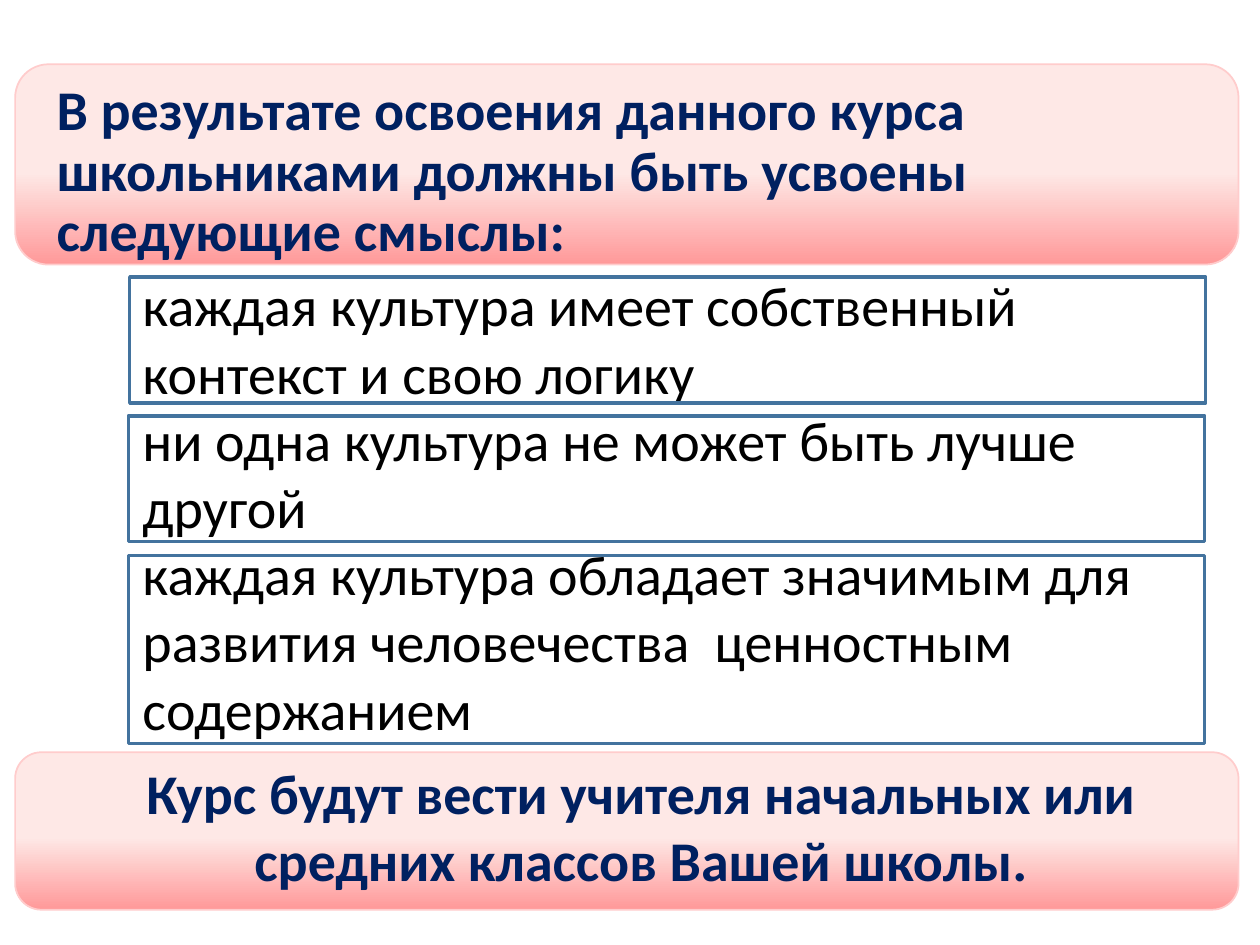
from copy import deepcopy
from typing import NamedTuple

from lxml.etree import SubElement
from pptx import Presentation
from pptx.dml.color import RGBColor
from pptx.enum.shapes import MSO_SHAPE
from pptx.enum.text import MSO_ANCHOR, MSO_AUTO_SIZE, PP_ALIGN
from pptx.oxml.ns import qn
from pptx.util import Inches, Pt

COLORS = {
    "navy": "002060",
    "black": "000000",
    "pale": "FEE8E6",
    "pink": "FF9999",
    "panel_line": "FFCCCC",
    "frame_line": "43739E",
}


class Area(NamedTuple):
    left: float
    top: float
    width: float
    height: float


PANELS = [Area(0.12, 0.51, 9.71, 1.59), Area(0.12, 5.97, 9.71, 1.25)]
FRAMES = [Area(1.03, 2.2, 8.54, 1), Area(1.02, 3.3, 8.54, 1), Area(1.02, 4.41, 8.54, 1.49)]
TITLE = "В результате освоения данного курса школьниками должны быть усвоены следующие смыслы:"
MEANINGS = [
    "каждая культура имеет собственный контекст и свою логику",
    "ни одна культура не может быть лучше другой",
    "каждая культура обладает значимым для развития человечества  ценностным содержанием",
]
CLOSING = "Курс будут вести учителя начальных или средних классов Вашей школы."


def color(name: str) -> RGBColor:
    return RGBColor.from_string(COLORS[name])


def place(shape, area: Area) -> None:
    shape.left, shape.top, shape.width, shape.height = map(Inches, area)


def add_outlined(page, kind: MSO_SHAPE, area: Area, line: str, width: float):
    shape = page.shapes.add_shape(kind, *map(Inches, area))
    shape.shadow.inherit = False
    shape.line.color.rgb = color(line)
    shape.line.width = Pt(width)
    return shape


def add_panel(page, area: Area) -> None:
    panel = add_outlined(page, MSO_SHAPE.ROUNDED_RECTANGLE, area, "panel_line", 1)
    panel.fill.gradient()
    panel.fill.gradient_angle = 270
    first = panel.fill.gradient_stops[0]
    first.color.rgb = color("pale")
    first.position = 0
    stop_list = panel.fill._fill._gradFill.gsLst
    stop_list.insert(1, deepcopy(stop_list[0]))
    middle, last = list(panel.fill.gradient_stops)[1:]
    middle.position = 0.54
    last.position = 1
    last.color.rgb = color("pink")


def write(box, texts: list[str], ink: str, bold: bool, align: PP_ALIGN, anchor: MSO_ANCHOR) -> None:
    frame = box.text_frame
    frame.word_wrap = True
    frame.auto_size = MSO_AUTO_SIZE.NONE
    frame.vertical_anchor = anchor
    frame.text = "\n".join(texts)
    for para in frame.paragraphs:
        properties = para._p.get_or_add_pPr()
        properties.set("marL", "0")
        properties.set("indent", "0")
        SubElement(properties, qn("a:buNone"))
        para.alignment = align
        para.space_before = Pt(0)
        para.font.name = "Calibri"
        para.font.size = Pt(32)
        para.font.bold = bold
        para.font.color.rgb = color(ink)


def main() -> None:
    deck = Presentation()
    deck.slide_width, deck.slide_height = Inches(10), Inches(7.5)
    page = deck.slides.add_slide(deck.slide_layouts[1])
    title, body = page.placeholders

    # Gradient panels lie behind the text
    for area in PANELS:
        add_panel(page, area)
    for placeholder in (title, body):
        page.shapes._spTree.append(placeholder._element)

    # Heading, list of meanings and closing line
    place(title, Area(0.35, 0.65, 9.47, 1.45))
    write(title, [TITLE], "navy", True, PP_ALIGN.LEFT, MSO_ANCHOR.MIDDLE)
    title.text_frame.paragraphs[0].line_spacing = 0.9
    place(body, Area(1.03, 2.1, 8.36, 3.87))
    write(body, MEANINGS, "black", False, PP_ALIGN.LEFT, MSO_ANCHOR.TOP)
    closing = page.shapes.add_textbox(*map(Inches, Area(0.72, 5.97, 8.74, 1.18)))
    write(closing, [CLOSING], "navy", True, PP_ALIGN.CENTER, MSO_ANCHOR.TOP)

    # Frames around the meanings
    for area in FRAMES:
        add_outlined(page, MSO_SHAPE.RECTANGLE, area, "frame_line", 2).fill.background()

    deck.save("out.pptx")


if __name__ == "__main__":
    main()
